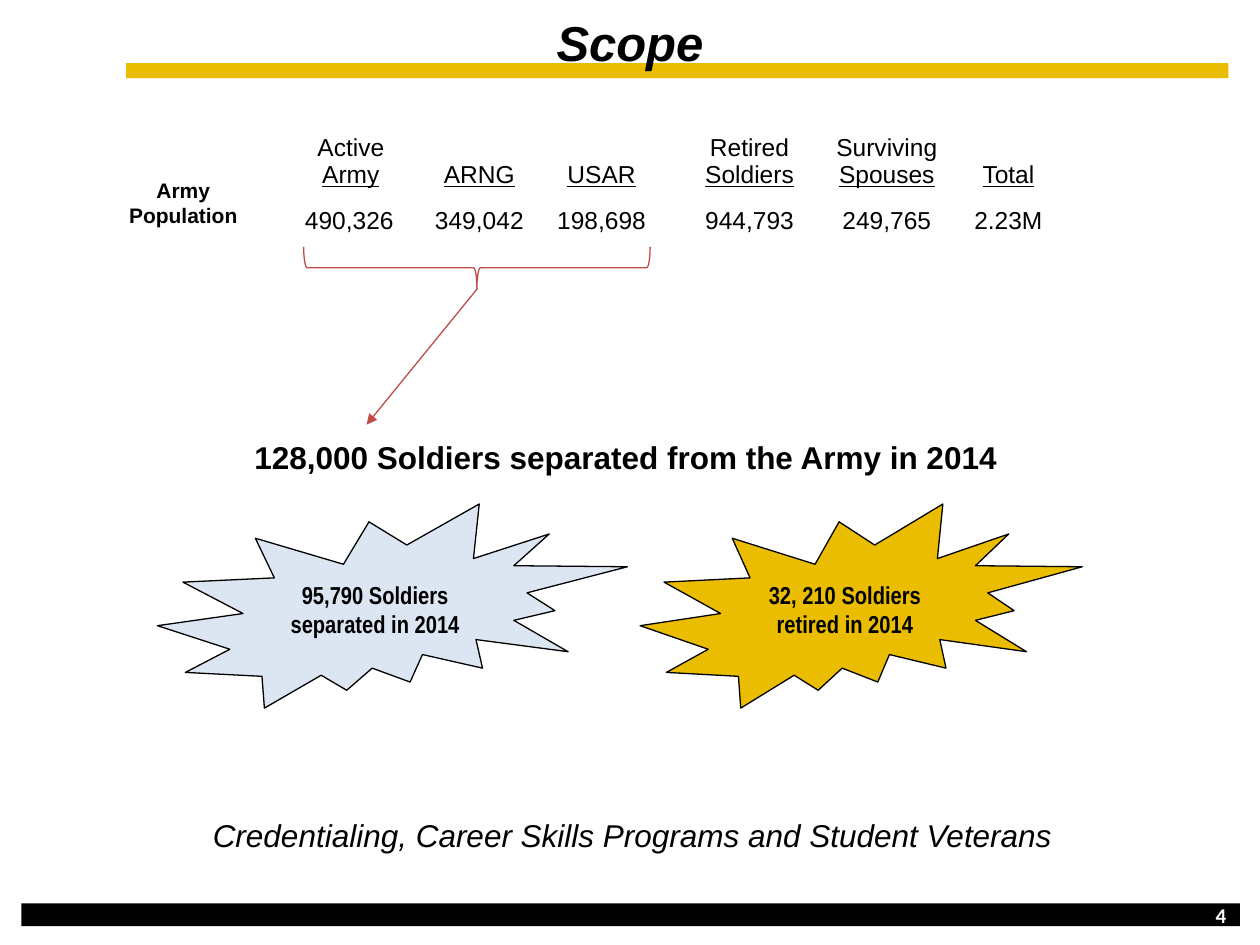
from dataclasses import dataclass

from lxml import etree
from pptx import Presentation
from pptx.dml.color import RGBColor
from pptx.enum import shapes, text
from pptx.oxml import ns
from pptx.util import Inches, Pt

GOLD, BLACK, RED, PALE, WHITE = "EABD00", "000000", "BF4C48", "DCE6F2", "FFFFFF"
KIND, ALIGN, ANCHOR = shapes.MSO_SHAPE, text.PP_ALIGN, text.MSO_ANCHOR


@dataclass
class Style:
    size: float
    font: str = "Arial"
    color: str = BLACK
    bold: bool = False
    italic: bool = False
    align: int = ALIGN.CENTER


@dataclass
class Label:
    box: tuple
    words: str
    style: Style
    wrap: bool = False
    anchor: int = ANCHOR.TOP
    top: float = 0.05


@dataclass
class Group:
    """One column of the population table."""
    width: float
    head: str
    count: str
    left: float = 0.07
    right: float = 0.07
    align: int = ALIGN.CENTER


def rgb(code: str) -> RGBColor:
    return RGBColor.from_string(code)


def write(frame, words: str, style: Style) -> None:
    frame.text = words
    for para in frame.paragraphs:
        para.alignment = style.align
        for run in para.runs:
            font = run.font
            font.name, font.size = style.font, Pt(style.size)
            font.bold, font.italic = style.bold, style.italic
            font.color.rgb = rgb(style.color)


def add_label(slide, label: Label) -> None:
    frame = slide.shapes.add_textbox(*map(Inches, label.box)).text_frame
    frame.word_wrap = label.wrap
    frame.vertical_anchor = label.anchor
    frame.margin_top = Inches(label.top)
    write(frame, label.words, label.style)


def add_form(slide, kind, box: tuple, fill: str = "", line: str = ""):
    form = slide.shapes.add_shape(kind, *map(Inches, box))
    form.shadow.inherit = False
    if fill:
        form.fill.solid()
        form.fill.fore_color.rgb = rgb(fill)
    else:
        form.fill.background()
    if line:
        form.line.color.rgb = rgb(line)
        form.line.width = Pt(0.75)
    else:
        form.line.fill.background()
    return form


def add_burst(slide, box: tuple, fill: str, words: str) -> None:
    frame = add_form(slide, KIND.EXPLOSION2, box, fill, BLACK).text_frame
    frame.word_wrap = True
    frame.vertical_anchor = ANCHOR.MIDDLE
    write(frame, words, Style(14, "Arial Narrow", bold=True))


def add_arrow(slide, start: tuple, end: tuple) -> None:
    arrow = slide.shapes.add_connector(
        shapes.MSO_CONNECTOR.STRAIGHT, *map(Inches, start + end))
    arrow.line.color.rgb = rgb(RED)
    arrow.line.width = Pt(0.75)
    etree.SubElement(arrow.line._get_or_add_ln(), ns.qn("a:tailEnd"), type="triangle")
    etree.SubElement(arrow._element.spPr, ns.qn("a:effectLst"))


def fill_cell(cell, words: str, group: Group, align: int) -> None:
    cell.fill.background()
    cell.vertical_anchor = ANCHOR.BOTTOM
    cell.margin_left, cell.margin_right = Inches(group.left), Inches(group.right)
    cell.margin_top = cell.margin_bottom = Inches(0.04)
    write(cell.text_frame, words, Style(14, align=align))


def add_counts(slide, left: float, top: float, groups: list[Group]) -> None:
    width = sum(group.width for group in groups)
    table = slide.shapes.add_table(
        2, len(groups), *map(Inches, (left, top, width, 0.98))).table
    table.first_row = table.horz_banding = False
    table.rows[0].height, table.rows[1].height = Inches(0.62), Inches(0.36)
    for col, group in enumerate(groups):
        table.columns[col].width = Inches(group.width)
        head = table.cell(0, col)
        fill_cell(head, group.head, group, ALIGN.CENTER)
        head.text_frame.paragraphs[-1].runs[0].font.underline = True
        fill_cell(table.cell(1, col), group.count, group, group.align)


GROUPS = [
    Group(0.97, "Active\nArmy", "490,326", right=0.17, align=ALIGN.LEFT),
    Group(0.97, "ARNG", "349,042"),
    Group(0.97, "USAR", "198,698"),
    Group(1.22, "Retired\nSoldiers", "944,793", left=0.23),
    Group(1.12, "Surviving\nSpouses", "249,765"),
    Group(0.81, "Total", "2.23M"),
]

LABELS = [
    Label((7.5, 7.05, 2.33, 0.42), "4",
          Style(12, "Calibri", WHITE, bold=True, align=ALIGN.RIGHT),
          wrap=True, anchor=ANCHOR.MIDDLE),
    Label((0.5, 0, 9, 0.53), "Scope", Style(28, bold=True, italic=True),
          wrap=True, top=0.1),
    Label((0.92, 1.36, 1.07, 0.5), "Army\nPopulation", Style(12, bold=True)),
    Label((1.92, 3.43, 6.3, 0.4), "128,000 Soldiers separated from the Army in 2014",
          Style(18, bold=True, align=ALIGN.LEFT)),
    Label((1.59, 6.43, 6.98, 0.4),
          "Credentialing, Career Skills Programs and Student Veterans",
          Style(18, italic=True, align=ALIGN.LEFT)),
]


def main() -> None:
    deck = Presentation()
    deck.slide_width, deck.slide_height = Inches(10), Inches(7.5)
    slide = deck.slides.add_slide(deck.slide_layouts[6])
    add_form(slide, KIND.RECTANGLE, (1, 0.5, 8.75, 0.12), GOLD)
    add_form(slide, KIND.RECTANGLE, (0.17, 7.17, 9.67, 0.18), BLACK)
    add_burst(slide, (1.25, 4, 3.73, 1.62), PALE, "95,790 Soldiers separated in 2014")
    add_burst(slide, (5.08, 4, 3.51, 1.62), GOLD, "32, 210 Soldiers retired in 2014")
    add_counts(slide, 2.35, 0.92, GROUPS)
    for label in LABELS:
        add_label(slide, label)
    add_arrow(slide, (3.79, 2.29), (2.91, 3.37))
    brace = add_form(slide, KIND.RIGHT_BRACE, (3.62, 0.75, 0.33, 2.75), line=RED)
    brace.rotation = 90
    deck.save("out.pptx")


if __name__ == "__main__":
    main()
